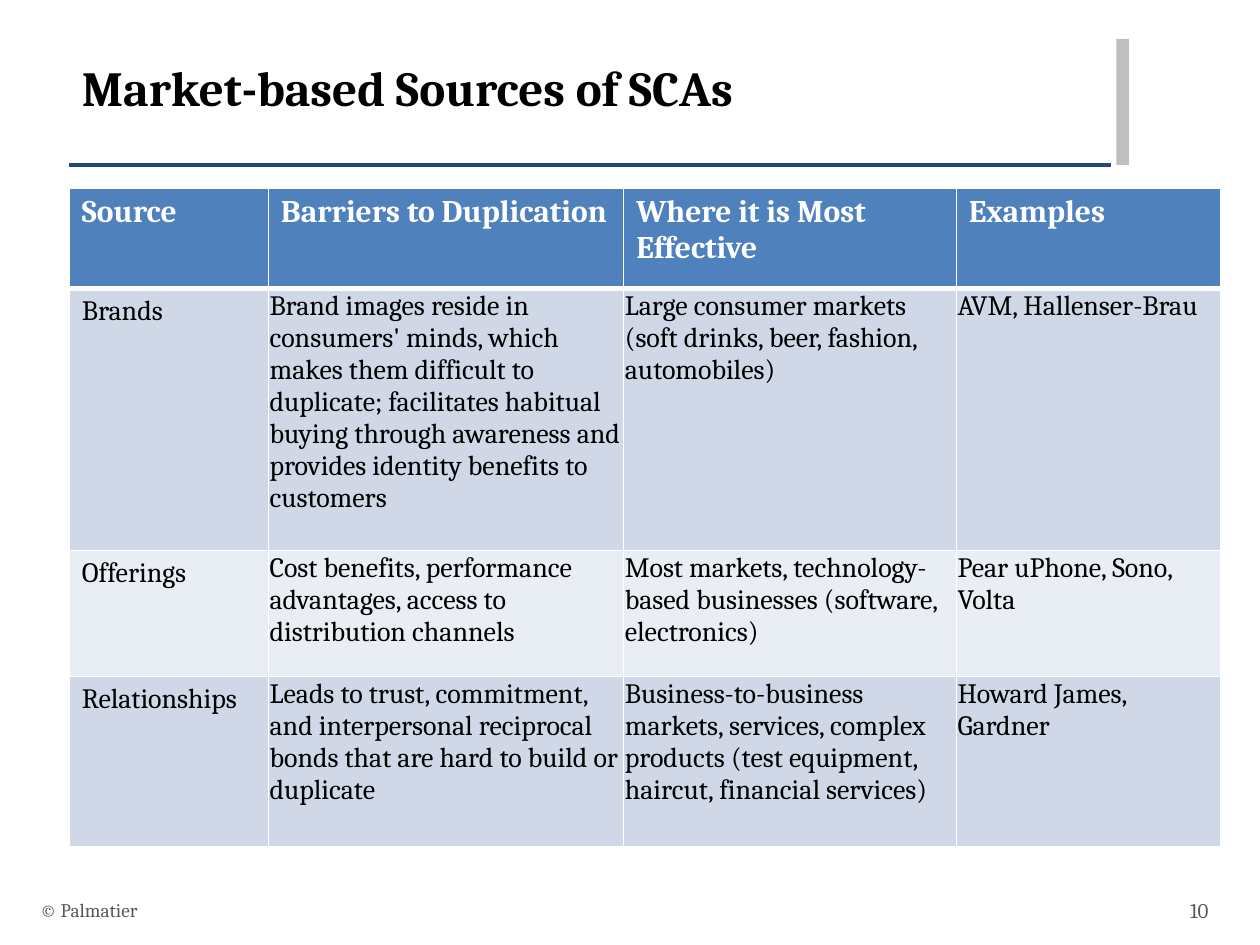
import pptx
import pptx.util
import pptx.dml.color
import pptx.enum.shapes
import pptx.enum.text
import pptx.oxml.ns
from lxml import etree

Inches = pptx.util.Inches
Pt = pptx.util.Pt
Align = pptx.enum.text.PP_ALIGN
Anchor = pptx.enum.text.MSO_ANCHOR

COLORS = {
    "rule": "1F497D", "bar": "BFBFBF", "text": "000000", "footer": "595959",
    "header": "4F81BD", "odd": "D0D8E8", "even": "E9EDF4", "white": "FFFFFF",
}
FONT = "Cambria"
TITLE = "Market-based Sources of SCAs"
TABLE = [
    ["Source", "Barriers to Duplication", "Where it is Most Effective", "Examples"],
    ["Brands",
     "Brand images reside in consumers' minds, which makes them difficult to duplicate; "
     "facilitates habitual buying through awareness and provides identity benefits to customers",
     "Large consumer markets (soft drinks, beer, fashion, automobiles)",
     "AVM, Hallenser-Brau"],
    ["Offerings",
     "Cost benefits, performance advantages, access to distribution channels",
     "Most markets, technology-based businesses (software, electronics)",
     "Pear uPhone, Sono, Volta"],
    ["Relationships",
     "Leads to trust, commitment, and interpersonal reciprocal bonds that are hard to build or duplicate",
     "Business-to-business markets, services, complex products "
     "(test equipment, haircut, financial services)",
     "Howard James, Gardner"],
]
COLUMN_WIDTHS = [1.58, 2.82, 2.64, 2.1]
ROW_HEIGHTS = [0.8, 2.08, 1, 1.35]
FOOTERS = [
    ("© Palmatier", 0.22, 6.7, 11, Align.LEFT),
    ("10", 9.08, 0.61, 12, Align.RIGHT),
]
TIGHT_MARGINS = {
    "margin_left": Inches(0.01), "margin_top": Inches(0.01),
    "margin_right": Inches(0.01), "margin_bottom": 0,
}


def color(name):
    return pptx.dml.color.RGBColor.from_string(COLORS[name])


def set_all(target, values):
    for name, value in values.items():
        setattr(target, name, value)


def write(text_frame, text, size, color_name, bold=False, alignment=Align.LEFT):
    text_frame.text = text
    paragraph = text_frame.paragraphs[0]
    paragraph.alignment = alignment
    set_all(paragraph.font, {"name": FONT, "size": Pt(size), "bold": bold})
    paragraph.font.color.rgb = color(color_name)


def add_borders(cell, widths):
    properties = cell._tc.get_or_add_tcPr()
    for side, width in widths.items():
        line = etree.SubElement(properties, pptx.oxml.ns.qn(f"a:ln{side}"), w=str(Pt(width)))
        fill = etree.SubElement(line, pptx.oxml.ns.qn("a:solidFill"))
        etree.SubElement(fill, pptx.oxml.ns.qn("a:srgbClr"), val=COLORS["white"])


def add_header(slide):
    rule = slide.shapes.add_connector(
        pptx.enum.shapes.MSO_CONNECTOR.STRAIGHT,
        Inches(0.55), Inches(1.31), Inches(8.82), Inches(1.31))
    rule.line.color.rgb = color("rule")
    rule.line.width = Pt(2)
    etree.SubElement(rule._element.spPr, pptx.oxml.ns.qn("a:effectLst"))

    bar = slide.shapes.add_shape(
        pptx.enum.shapes.MSO_SHAPE.RECTANGLE,
        Inches(8.86), Inches(0.31), Inches(0.1), Inches(1))
    bar.shadow.inherit = False
    bar.fill.solid()
    bar.fill.fore_color.rgb = color("bar")
    bar.line.fill.background()

    title = slide.shapes.title
    set_all(title, {"left": Inches(0.55), "top": Inches(0.41),
                    "width": Inches(8.26), "height": Inches(0.88)})
    write(title.text_frame, TITLE, 28, "text", bold=True)
    set_all(title.text_frame, {"vertical_anchor": Anchor.TOP, "word_wrap": True,
                               "auto_size": pptx.enum.text.MSO_AUTO_SIZE.NONE})


def add_footers(slide):
    for text, left, width, size, alignment in FOOTERS:
        box = slide.shapes.add_textbox(Inches(left), Inches(7.02), Inches(width), Inches(0.4))
        write(box.text_frame, text, size, "footer", alignment=alignment)
        set_all(box.text_frame, {"vertical_anchor": Anchor.MIDDLE, "word_wrap": True})


def add_source_table(slide):
    table = slide.shapes.add_table(
        len(ROW_HEIGHTS), len(COLUMN_WIDTHS), Inches(0.55), Inches(1.49),
        Inches(sum(COLUMN_WIDTHS)), Inches(sum(ROW_HEIGHTS))).table
    for column, width in zip(table.columns, COLUMN_WIDTHS):
        column.width = Inches(width)
    for row_index, (row, height) in enumerate(zip(table.rows, ROW_HEIGHTS)):
        row.height = Inches(height)
        is_header = row_index == 0
        fill_name = "header" if is_header else ("even", "odd")[row_index % 2]
        for column_index, cell in enumerate(row.cells):
            text = TABLE[row_index][column_index]
            if is_header:
                write(cell.text_frame, text, 18, "white", bold=True)
            else:
                write(cell.text_frame, text, 16, "text")
                if column_index:
                    set_all(cell, TIGHT_MARGINS)
            add_borders(cell, {"L": 1, "R": 1, "T": 3 if row_index == 1 else 1,
                               "B": 3 if is_header else 1})
            cell.fill.solid()
            cell.fill.fore_color.rgb = color(fill_name)


def main():
    presentation = pptx.Presentation()
    set_all(presentation, {"slide_width": Inches(10), "slide_height": Inches(7.5)})
    slide = presentation.slides.add_slide(presentation.slide_layouts[5])
    add_header(slide)
    add_footers(slide)
    add_source_table(slide)
    presentation.save("out.pptx")


if __name__ == "__main__":
    main()
